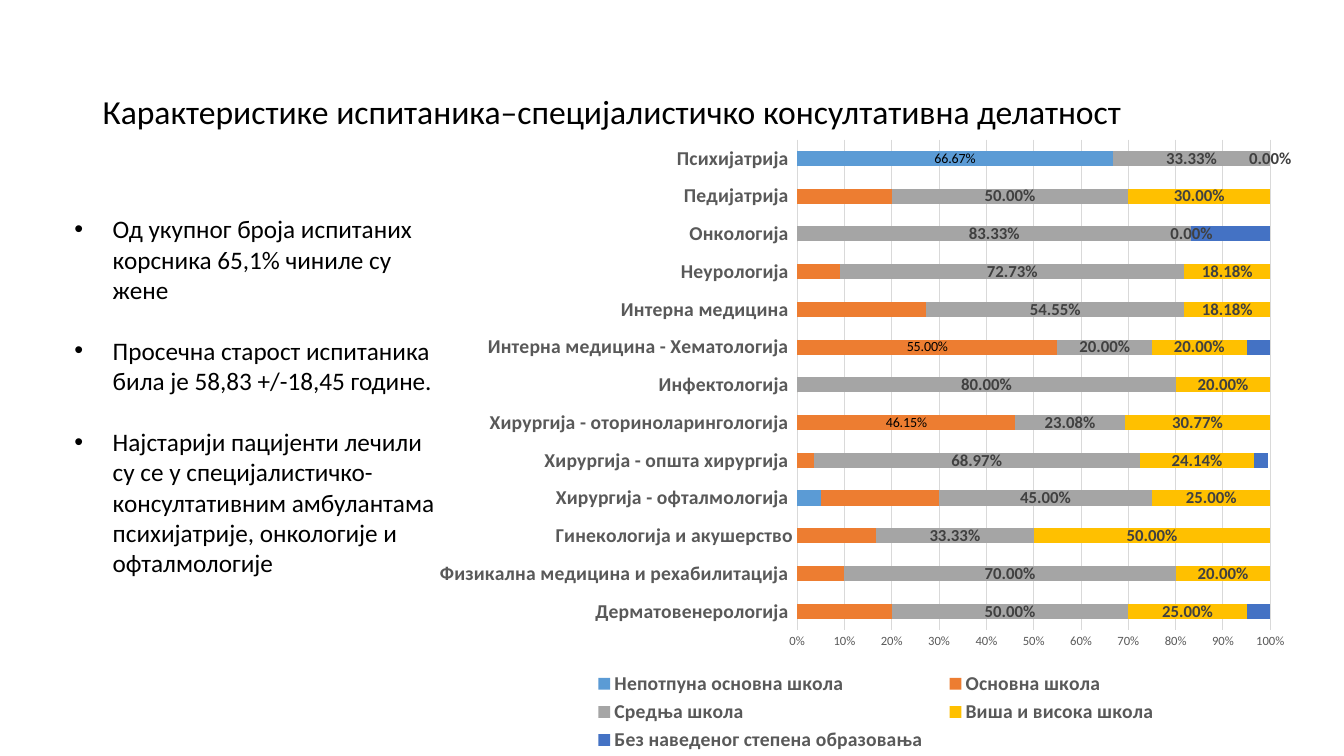
from dataclasses import dataclass

from lxml.etree import SubElement
from pptx import Presentation
from pptx.chart.chart import Chart
from pptx.chart.data import CategoryChartData
from pptx.chart.series import BarSeries
from pptx.dml.color import RGBColor
from pptx.enum.chart import XL_CHART_TYPE, XL_LABEL_POSITION, XL_LEGEND_POSITION, XL_TICK_MARK
from pptx.enum.text import MSO_ANCHOR
from pptx.oxml import parse_xml
from pptx.oxml.ns import nsdecls, qn
from pptx.slide import Slide
from pptx.text.text import Font, TextFrame
from pptx.util import Inches, Pt

FONT = "Calibri"
BLACK, AXIS_GRAY, LABEL_GRAY, GRID_GRAY = "000000", "595959", "404040", "D9D9D9"


@dataclass(frozen=True)
class Area:
    left: float
    top: float
    width: float
    height: float


@dataclass(frozen=True)
class Education:
    name: str
    color: str
    shares: tuple[float, ...]
    labelled_points: tuple[int, ...] = ()
    label_all: bool = False


TITLE = "Карактеристике испитаника–специјалистичко консултативна делатност"
FINDINGS = (
    "Од укупног броја испитаних корсника 65,1% чиниле су жене",
    "Просечна старост испитаника била је 58,83 +/-18,45 године.",
    "Најстарији пацијенти лечили су се у специјалистичко-консултативним "
    "амбулантама психијатрије, онкологије и офталмологије",
)
CLINICS = (
    "Дерматовенерологија ", "Физикална медицина и рехабилитација ",
    "Гинекологија и акушерство", "Хирургија - офталмологија ",
    "Хирургија - општа хирургија ", "Хирургија - оториноларингологија ",
    "Инфектологија ", "Интерна медицина - Хематологија ", "Интерна медицина ",
    "Неурологија ", "Онкологија ", "Педијатрија ", "Психијатрија ",
)
EDUCATION_LEVELS = (
    Education("Непотпуна основна школа", "5B9BD5",
              (0, 0, 0, 0.05, 0, 0, 0, 0, 0, 0, 0, 0, 0.6667), (12,)),
    Education("Основна школа", "ED7D31",
              (0.2, 0.1, 0.1667, 0.25, 0.0345, 0.4615, 0, 0.55, 0.2727, 0.0909, 0, 0.2, 0), (5, 7)),
    Education("Средња школа", "A5A5A5",
              (0.5, 0.7, 0.3333, 0.45, 0.6897, 0.2308, 0.8, 0.2, 0.5455, 0.7273, 0.8333, 0.5, 0.3333),
              label_all=True),
    Education("Виша и висока школа", "FFC000",
              (0.25, 0.2, 0.5, 0.25, 0.2414, 0.3077, 0.2, 0.2, 0.1818, 0.1818, 0, 0.3, 0),
              label_all=True),
    Education("Без наведеног степена образовања", "4472C4",
              (0.05, 0, 0, 0, 0.03, 0, 0, 0.05, 0, 0, 0.17, 0, 0)),
)


def rgb(color: str) -> RGBColor:
    return RGBColor.from_string(color)


def style_font(font: Font, size: float, color: str, bold: bool = False) -> None:
    font.name = FONT
    font.size = Pt(size)
    font.bold = bold
    font.color.rgb = rgb(color)


def add_text_frame(page: Slide, area: Area) -> TextFrame:
    box = page.shapes.add_textbox(
        Inches(area.left), Inches(area.top), Inches(area.width), Inches(area.height))
    box.text_frame.word_wrap = True
    return box.text_frame


def add_title(page: Slide) -> None:
    frame = add_text_frame(page, Area(0.92, 0.4, 11.5, 1.45))
    frame.vertical_anchor = MSO_ANCHOR.MIDDLE
    para = frame.paragraphs[0]
    para.line_spacing = 0.9
    span = para.add_run()
    span.text = TITLE
    style_font(span.font, 24, BLACK)


def add_findings(page: Slide) -> None:
    frame = add_text_frame(page, Area(0.64, 2.07, 3.87, 3.74))
    for index, finding in enumerate(FINDINGS):
        para = frame.add_paragraph() if index else frame.paragraphs[0]
        if index:
            para.space_before = Pt(22)
        properties = para._p.get_or_add_pPr()
        properties.set("marL", str(Inches(0.38)))
        properties.set("indent", str(-Inches(0.38)))
        SubElement(properties, qn("a:buFont")).set("typeface", "Arial")
        SubElement(properties, qn("a:buChar")).set("char", "•")
        span = para.add_run()
        span.text = finding
        style_font(span.font, 18, BLACK)


def layout_xml(area: Area, inner: bool = False):
    target = '<c:layoutTarget val="inner"/>' if inner else ""
    return parse_xml(
        f'<c:layout {nsdecls("c")}><c:manualLayout>{target}'
        '<c:xMode val="edge"/><c:yMode val="edge"/>'
        f'<c:x val="{area.left}"/><c:y val="{area.top}"/>'
        f'<c:w val="{area.width}"/><c:h val="{area.height}"/>'
        '</c:manualLayout></c:layout>')


def style_axes(chart: Chart) -> None:
    clinics, shares = chart.category_axis, chart.value_axis
    for axis in (clinics, shares):
        axis.major_tick_mark = XL_TICK_MARK.NONE
        axis.minor_tick_mark = XL_TICK_MARK.NONE
    style_font(clinics.tick_labels.font, 14, AXIS_GRAY, True)
    style_font(shares.tick_labels.font, 9, AXIS_GRAY)
    shares.minimum_scale, shares.maximum_scale, shares.major_unit = 0, 1, 0.1
    shares.tick_labels.number_format = "0%"
    shares.tick_labels.number_format_is_linked = False
    shares.format.line.fill.background()
    shares.has_major_gridlines = True
    for line in (clinics.format.line, shares.major_gridlines.format.line):
        line.color.rgb = rgb(GRID_GRAY)
        line.width = Pt(0.75)


def style_series(series: BarSeries, education: Education) -> None:
    series.format.fill.solid()
    series.format.fill.fore_color.rgb = rgb(education.color)
    series.invert_if_negative = False
    for index in education.labelled_points:
        series.points[index].data_label.position = XL_LABEL_POSITION.CENTER
    if education.labelled_points:
        series.data_labels.show_value = False
    if education.label_all:
        labels = series.data_labels
        labels.show_value = True
        labels.number_format = "0.00%"
        labels.number_format_is_linked = False
        style_font(labels.font, 12, LABEL_GRAY, True)


def add_education_chart(page: Slide) -> None:
    chart_data = CategoryChartData(number_format="0.00%")
    chart_data.categories = CLINICS
    for education in EDUCATION_LEVELS:
        chart_data.add_series(education.name, education.shares)
    chart = page.shapes.add_chart(
        XL_CHART_TYPE.BAR_STACKED, Inches(4.17), Inches(1.26),
        Inches(8.69), Inches(6.24), chart_data).chart
    chart.has_title = False
    style_font(chart.font, 10, BLACK)
    style_axes(chart)
    plot = chart.plots[0]
    plot.gap_width, plot.overlap = 150, 100
    plot.vary_by_categories = False
    for series, education in zip(plot.series, EDUCATION_LEVELS):
        style_series(series, education)

    chart.has_legend = True
    legend = chart.legend
    legend.position = XL_LEGEND_POSITION.BOTTOM
    legend.include_in_layout = False
    style_font(legend.font, 14, AXIS_GRAY, True)
    legend_element = legend._element
    for old in legend_element.findall(qn("c:layout")):
        legend_element.remove(old)
    legend_element.find(qn("c:legendPos")).addnext(layout_xml(Area(0.18, 0.86, 0.68, 0.14)))
    plot_area = chart._chartSpace.chart.plotArea
    for old in plot_area.findall(qn("c:layout")):
        plot_area.remove(old)
    plot_area.insert(0, layout_xml(Area(0.43, 0.02, 0.54, 0.78), inner=True))


def main() -> None:
    deck = Presentation()
    deck.slide_width, deck.slide_height = Inches(13.33), Inches(7.5)
    page = deck.slides.add_slide(deck.slide_layouts[6])
    add_title(page)
    add_education_chart(page)
    add_findings(page)
    deck.save("out.pptx")


if __name__ == "__main__":
    main()
